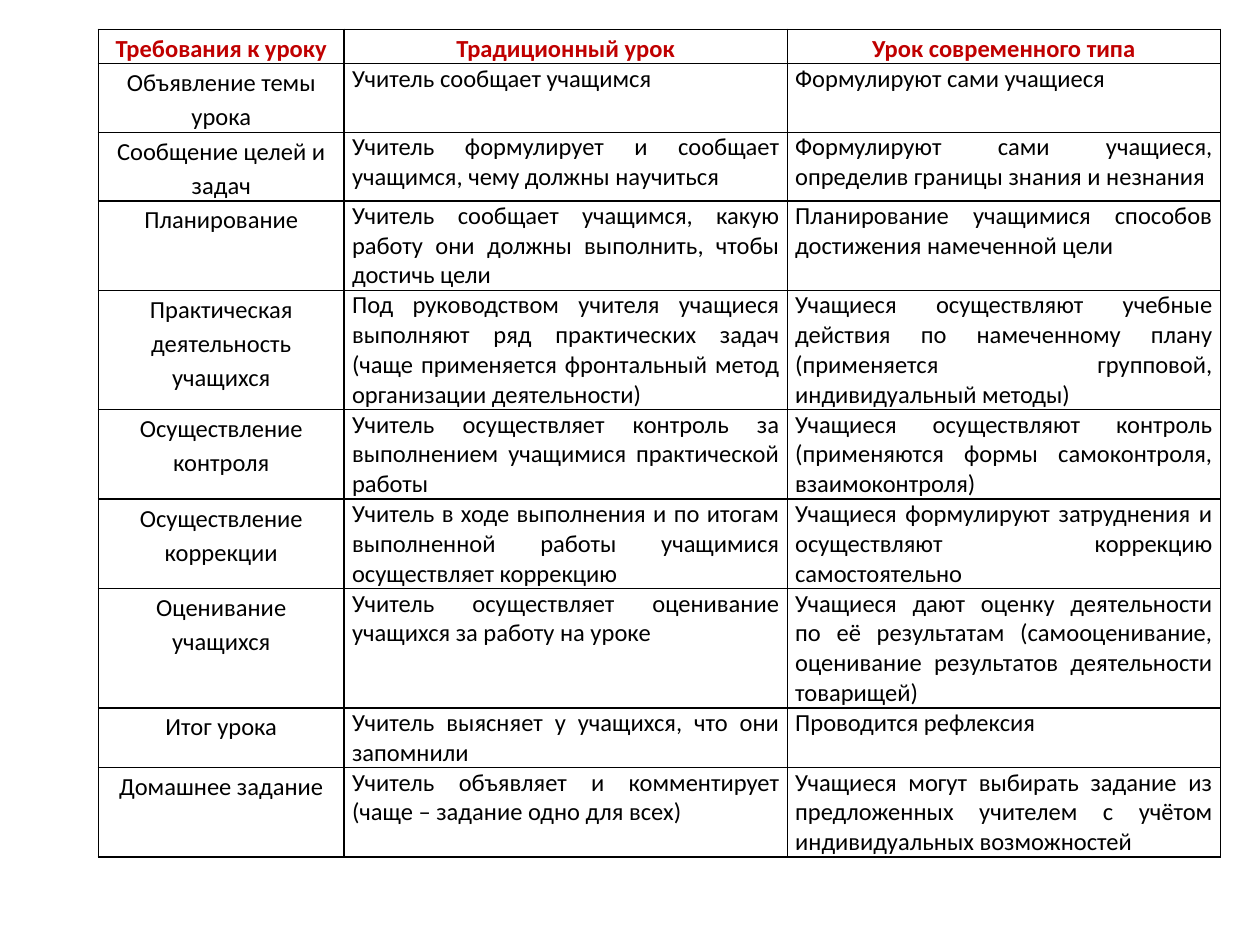
from dataclasses import dataclass

from lxml import etree
from pptx import Presentation
from pptx.dml.color import RGBColor
from pptx.enum.text import MSO_ANCHOR, PP_ALIGN
from pptx.oxml.ns import qn
from pptx.table import _Cell
from pptx.util import Pt

CENTER = PP_ALIGN.CENTER
JUSTIFY = PP_ALIGN.JUSTIFY
TOP = MSO_ANCHOR.TOP

BLACK = RGBColor(0x00, 0x00, 0x00)
RED = RGBColor(0xC0, 0x00, 0x00)

FONT = "Calibri"
LINE_HEIGHT = 16.9
TABLE_LEFT, TABLE_TOP = 56.2, 16.8
COLUMN_WIDTHS = (140.5, 253.2, 247.5)
SIDE_MARGIN = 4.5


@dataclass(frozen=True)
class Requirement:
    name: str
    traditional: str
    modern: str
    lines: int


HEADING = Requirement("Требования к уроку", "Традиционный урок", "Урок современного типа", 1)
REQUIREMENTS = (
    Requirement("Объявление темы урока", "Учитель сообщает учащимся",
                "Формулируют сами учащиеся", 2),
    Requirement("Сообщение целей и задач",
                "Учитель формулирует и сообщает учащимся, чему должны научиться",
                "Формулируют сами учащиеся, определив границы знания и незнания", 2),
    Requirement("Планирование",
                "Учитель сообщает учащимся, какую работу они должны выполнить, "
                "чтобы достичь цели",
                "Планирование учащимися способов достижения намеченной цели", 3),
    Requirement("Практическая деятельность учащихся",
                "Под руководством учителя учащиеся выполняют ряд практических задач "
                "(чаще применяется фронтальный метод организации деятельности)",
                "Учащиеся осуществляют учебные действия по намеченному плану "
                "(применяется групповой, индивидуальный методы)", 4),
    Requirement("Осуществление контроля",
                "Учитель осуществляет контроль за выполнением учащимися "
                "практической работы",
                "Учащиеся осуществляют контроль (применяются формы самоконтроля, "
                "взаимоконтроля)", 3),
    Requirement("Осуществление коррекции",
                "Учитель в ходе выполнения и по итогам выполненной работы учащимися "
                "осуществляет коррекцию",
                "Учащиеся формулируют затруднения и осуществляют коррекцию "
                "самостоятельно", 3),
    Requirement("Оценивание учащихся",
                "Учитель осуществляет оценивание учащихся за работу на уроке",
                "Учащиеся дают оценку деятельности по её результатам (самооценивание, "
                "оценивание результатов деятельности товарищей)", 4),
    Requirement("Итог урока", "Учитель выясняет у учащихся, что они запомнили",
                "Проводится рефлексия", 2),
    Requirement("Домашнее задание",
                "Учитель объявляет и комментирует (чаще – задание одно для всех)",
                "Учащиеся могут выбирать задание из предложенных учителем с учётом "
                "индивидуальных возможностей", 3),
)


def write_text(cell: _Cell, text: str, *, align: PP_ALIGN = JUSTIFY, spacing: float = 1.0,
               color: RGBColor = BLACK, bold: bool = False) -> None:
    paragraph = cell.text_frame.paragraphs[0]
    paragraph.alignment = align
    paragraph.line_spacing = spacing
    paragraph.space_after = Pt(10)
    run = paragraph.add_run()
    run.text = text
    run.font.name = FONT
    run.font.size = Pt(14)
    run.font.bold = bold
    run.font.color.rgb = color


def frame_cell(cell: _Cell) -> None:
    cell.margin_left = cell.margin_right = Pt(SIDE_MARGIN)
    cell.margin_top = cell.margin_bottom = 0
    cell.vertical_anchor = TOP
    properties = cell._tc.get_or_add_tcPr()
    for side in ("a:lnL", "a:lnR", "a:lnT", "a:lnB"):
        border = etree.SubElement(properties, qn(side), w=str(Pt(1)))
        ink = etree.SubElement(border, qn("a:solidFill"))
        etree.SubElement(ink, qn("a:srgbClr"), val=str(BLACK))
    cell.fill.background()


def main() -> None:
    presentation = Presentation()
    presentation.slide_width, presentation.slide_height = Pt(720), Pt(540)
    slide = presentation.slides.add_slide(presentation.slide_layouts[6])

    rows = (HEADING, *REQUIREMENTS)
    total_height = LINE_HEIGHT * sum(row.lines for row in rows)
    comparison = slide.shapes.add_table(
        len(rows), len(COLUMN_WIDTHS), Pt(TABLE_LEFT), Pt(TABLE_TOP),
        Pt(sum(COLUMN_WIDTHS)), Pt(total_height)).table
    comparison.first_row = False
    comparison.horz_banding = False
    for column, width in zip(comparison.columns, COLUMN_WIDTHS):
        column.width = Pt(width)

    for row_index, row in enumerate(rows):
        comparison.rows[row_index].height = Pt(LINE_HEIGHT * row.lines)
        is_heading = row is HEADING
        for column_index, text in enumerate((row.name, row.traditional, row.modern)):
            cell = comparison.cell(row_index, column_index)
            frame_cell(cell)
            centered = is_heading or column_index == 0
            write_text(cell, text, align=CENTER if centered else JUSTIFY,
                       spacing=1.15 if centered else 1.0,
                       color=RED if is_heading else BLACK, bold=is_heading)

    presentation.save("out.pptx")


if __name__ == "__main__":
    main()
